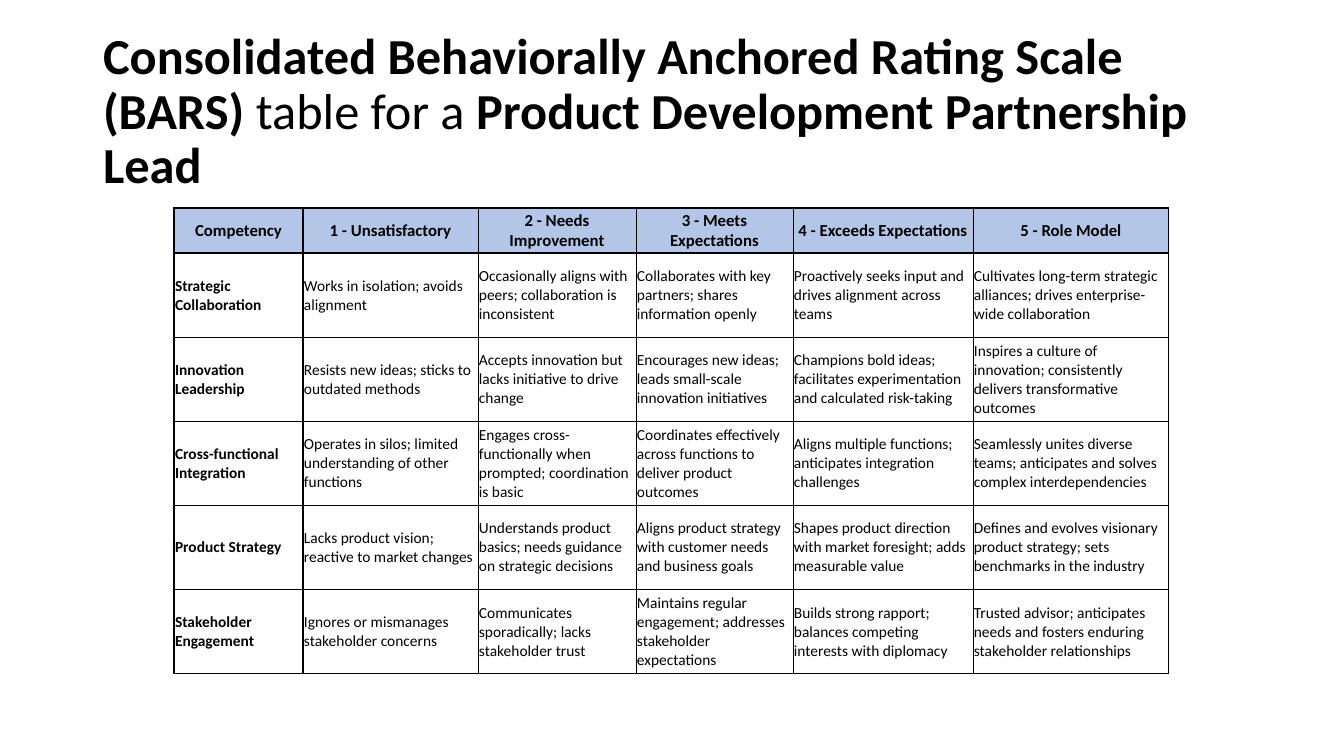
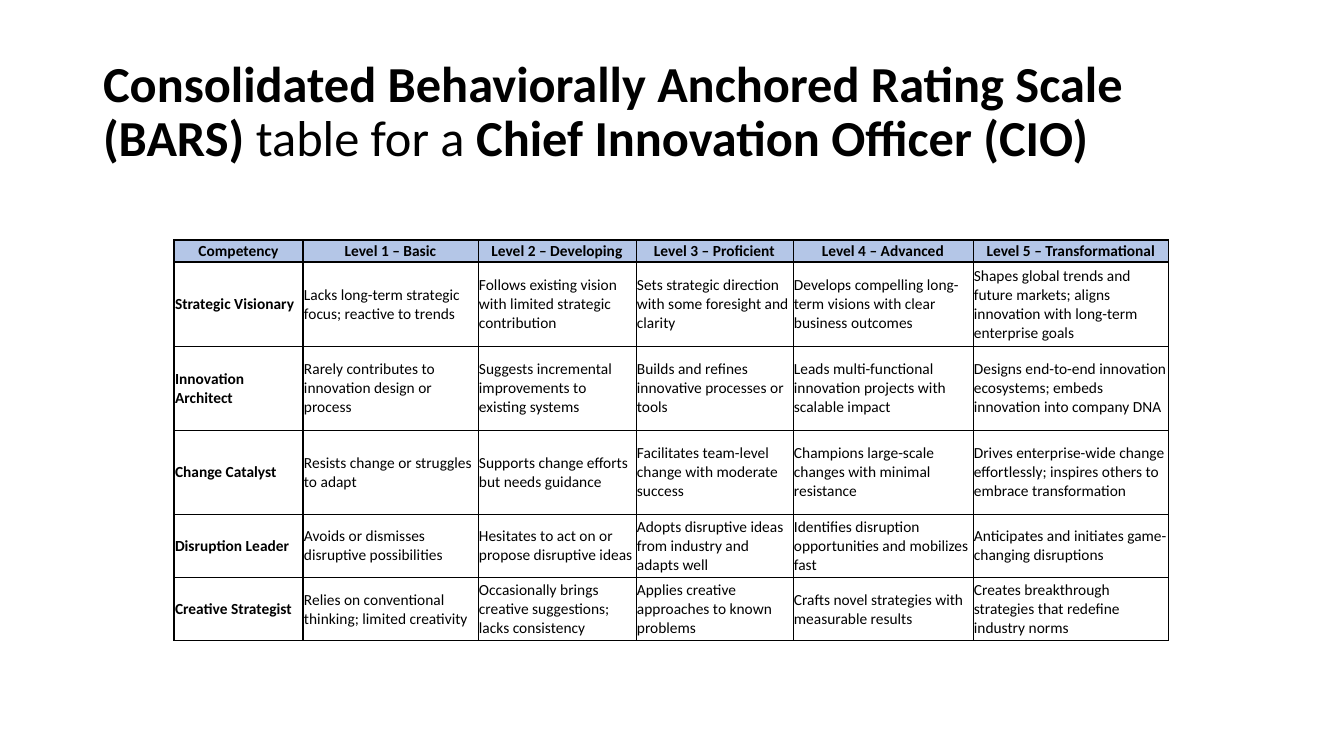
from dataclasses import dataclass

from lxml.etree import SubElement
from pptx import Presentation
from pptx.dml.color import RGBColor
from pptx.enum.text import MSO_ANCHOR, MSO_AUTO_SIZE, PP_ALIGN
from pptx.oxml.ns import qn
from pptx.util import Emu, Pt

PIXELS_PER_INCH = 100.8
COLORS = {"text": "000000", "border": "000000", "header": "B4C6E7"}
FONT = "Calibri"
TITLE_SIZE = 36
BODY_SIZE = 11
THICK, THIN = 1, 0.5
TABLE_LEFT = 174
COLUMN_WIDTHS = (129, 175, 158, 157, 180, 196)
TITLE_LEAD = "Consolidated Behaviorally Anchored Rating Scale (BARS)"
TITLE_LINK = " table for a "


@dataclass(frozen=True)
class RatingScale:
    """One role's rating table: its place, header size and wording."""

    role: str
    top: int
    header_size: int
    row_heights: tuple[int, ...]
    rows: tuple[tuple[str, ...], ...]


SCALES = (
    RatingScale(
        role="Product Development Partnership Lead",
        top=208,
        header_size=12,
        row_heights=(45, 84, 84, 84, 84, 85),
        rows=(
            ("Competency", "1 - Unsatisfactory", "2 - Needs Improvement",
             "3 - Meets Expectations", "4 - Exceeds Expectations", "5 - Role Model"),
            ("Strategic Collaboration",
             "Works in isolation; avoids alignment",
             "Occasionally aligns with peers; collaboration is inconsistent",
             "Collaborates with key partners; shares information openly",
             "Proactively seeks input and drives alignment across teams",
             "Cultivates long-term strategic alliances; drives enterprise-wide collaboration"),
            ("Innovation Leadership",
             "Resists new ideas; sticks to outdated methods",
             "Accepts innovation but lacks initiative to drive change",
             "Encourages new ideas; leads small-scale innovation initiatives",
             "Champions bold ideas; facilitates experimentation and calculated risk-taking",
             "Inspires a culture of innovation; consistently delivers transformative outcomes"),
            ("Cross-functional Integration",
             "Operates in silos; limited understanding of other functions",
             "Engages cross-functionally when prompted; coordination is basic",
             "Coordinates effectively across functions to deliver product outcomes",
             "Aligns multiple functions; anticipates integration challenges",
             "Seamlessly unites diverse teams; anticipates and solves complex interdependencies"),
            ("Product Strategy",
             "Lacks product vision; reactive to market changes",
             "Understands product basics; needs guidance on strategic decisions",
             "Aligns product strategy with customer needs and business goals",
             "Shapes product direction with market foresight; adds measurable value",
             "Defines and evolves visionary product strategy; sets benchmarks in the industry"),
            ("Stakeholder Engagement",
             "Ignores or mismanages stakeholder concerns",
             "Communicates sporadically; lacks stakeholder trust",
             "Maintains regular engagement; addresses stakeholder expectations",
             "Builds strong rapport; balances competing interests with diplomacy",
             "Trusted advisor; anticipates needs and fosters enduring stakeholder relationships"),
        ),
    ),
    RatingScale(
        role="Chief Innovation Officer (CIO)",
        top=240,
        header_size=11,
        row_heights=(22, 84, 84, 84, 63, 64),
        rows=(
            ("Competency", "Level 1 – Basic", "Level 2 – Developing",
             "Level 3 – Proficient", "Level 4 – Advanced", "Level 5 – Transformational"),
            ("Strategic Visionary",
             "Lacks long-term strategic focus; reactive to trends",
             "Follows existing vision with limited strategic contribution",
             "Sets strategic direction with some foresight and clarity",
             "Develops compelling long-term visions with clear business outcomes",
             "Shapes global trends and future markets; aligns innovation with long-term enterprise goals"),
            ("Innovation Architect",
             "Rarely contributes to innovation design or process",
             "Suggests incremental improvements to existing systems",
             "Builds and refines innovative processes or tools",
             "Leads multi-functional innovation projects with scalable impact",
             "Designs end-to-end innovation ecosystems; embeds innovation into company DNA"),
            ("Change Catalyst",
             "Resists change or struggles to adapt",
             "Supports change efforts but needs guidance",
             "Facilitates team-level change with moderate success",
             "Champions large-scale changes with minimal resistance",
             "Drives enterprise-wide change effortlessly; inspires others to embrace transformation"),
            ("Disruption Leader",
             "Avoids or dismisses disruptive possibilities",
             "Hesitates to act on or propose disruptive ideas",
             "Adopts disruptive ideas from industry and adapts well",
             "Identifies disruption opportunities and mobilizes fast",
             "Anticipates and initiates game-changing disruptions"),
            ("Creative Strategist",
             "Relies on conventional thinking; limited creativity",
             "Occasionally brings creative suggestions; lacks consistency",
             "Applies creative approaches to known problems",
             "Crafts novel strategies with measurable results",
             "Creates breakthrough strategies that redefine industry norms"),
        ),
    ),
)


def px(length: int) -> Emu:
    """Turn a length in px into EMU."""
    return Emu(round(length * 914400 / PIXELS_PER_INCH))


def style_font(font, size: int, bold: bool) -> None:
    """Apply the shared typeface and text colour."""
    font.name = FONT
    font.size = Pt(size)
    font.bold = bold
    font.color.rgb = RGBColor.from_string(COLORS["text"])


def add_title(page, role: str) -> None:
    """Place the title and write its bold and regular spans."""
    title = page.shapes.title
    title.left, title.top, title.width, title.height = map(px, (93, 40, 1159, 146))
    frame = title.text_frame
    frame.word_wrap = True
    frame.auto_size = MSO_AUTO_SIZE.NONE
    frame.vertical_anchor = MSO_ANCHOR.MIDDLE
    para = frame.paragraphs[0]
    para.alignment = PP_ALIGN.LEFT
    para.line_spacing = 0.9
    for text, bold in ((TITLE_LEAD, True), (TITLE_LINK, False), (role, True)):
        span = para.add_run()
        span.text = text
        style_font(span.font, TITLE_SIZE, bold)


def add_borders(cell, row: int, column: int, last_row: int, last_column: int) -> None:
    """Frame the table, its header row and its first column with thick lines."""
    thick_sides = {
        "L": column <= 1,
        "R": column in (0, last_column),
        "T": row <= 1,
        "B": row in (0, last_row),
    }
    properties = cell._tc.get_or_add_tcPr()
    for side, is_thick in thick_sides.items():
        width = Pt(THICK if is_thick else THIN)
        line = SubElement(properties, qn(f"a:ln{side}"), w=str(width))
        fill = SubElement(line, qn("a:solidFill"))
        SubElement(fill, qn("a:srgbClr"), val=COLORS["border"])


def fill_cell(cell, text: str, row: int, column: int, header_size: int) -> None:
    """Write and format one cell by its place in the table."""
    is_header = row == 0
    cell.margin_left = cell.margin_right = cell.margin_top = px(1)
    cell.margin_bottom = 0
    cell.vertical_anchor = MSO_ANCHOR.MIDDLE
    if is_header:
        cell.fill.solid()
        cell.fill.fore_color.rgb = RGBColor.from_string(COLORS["header"])
    else:
        cell.fill.background()
    cell.text_frame.text = text
    para = cell.text_frame.paragraphs[0]
    para.alignment = PP_ALIGN.CENTER if is_header else PP_ALIGN.LEFT
    size = header_size if is_header else BODY_SIZE
    style_font(para.runs[0].font, size, is_header or column == 0)


def add_rating_table(page, scale: RatingScale) -> None:
    """Draw the rating table of one role."""
    row_count, column_count = len(scale.rows), len(COLUMN_WIDTHS)
    table = page.shapes.add_table(
        row_count, column_count, px(TABLE_LEFT), px(scale.top),
        px(sum(COLUMN_WIDTHS)), px(sum(scale.row_heights)),
    ).table
    table.first_row = table.horz_banding = False
    for column, width in zip(table.columns, COLUMN_WIDTHS):
        column.width = px(width)
    for row, height in zip(table.rows, scale.row_heights):
        row.height = px(height)
    for row, texts in enumerate(scale.rows):
        for column, text in enumerate(texts):
            cell = table.cell(row, column)
            add_borders(cell, row, column, row_count - 1, column_count - 1)
            fill_cell(cell, text, row, column, scale.header_size)


def main() -> None:
    """Build and save the deck."""
    deck = Presentation()
    deck.slide_width, deck.slide_height = px(1344), px(756)
    title_only = deck.slide_layouts.get_by_name("Title Only")
    for scale in SCALES:
        page = deck.slides.add_slide(title_only)
        add_title(page, scale.role)
        add_rating_table(page, scale)
    deck.save("out.pptx")


if __name__ == "__main__":
    main()
